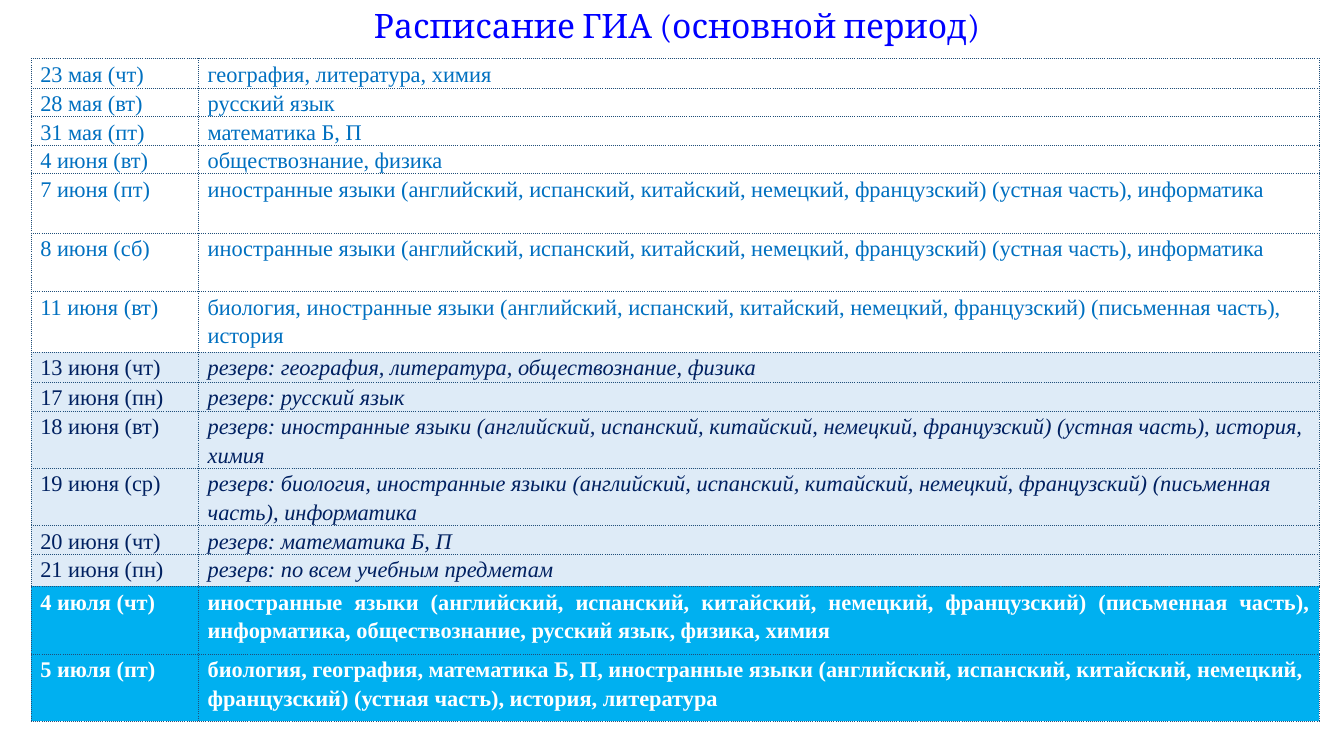
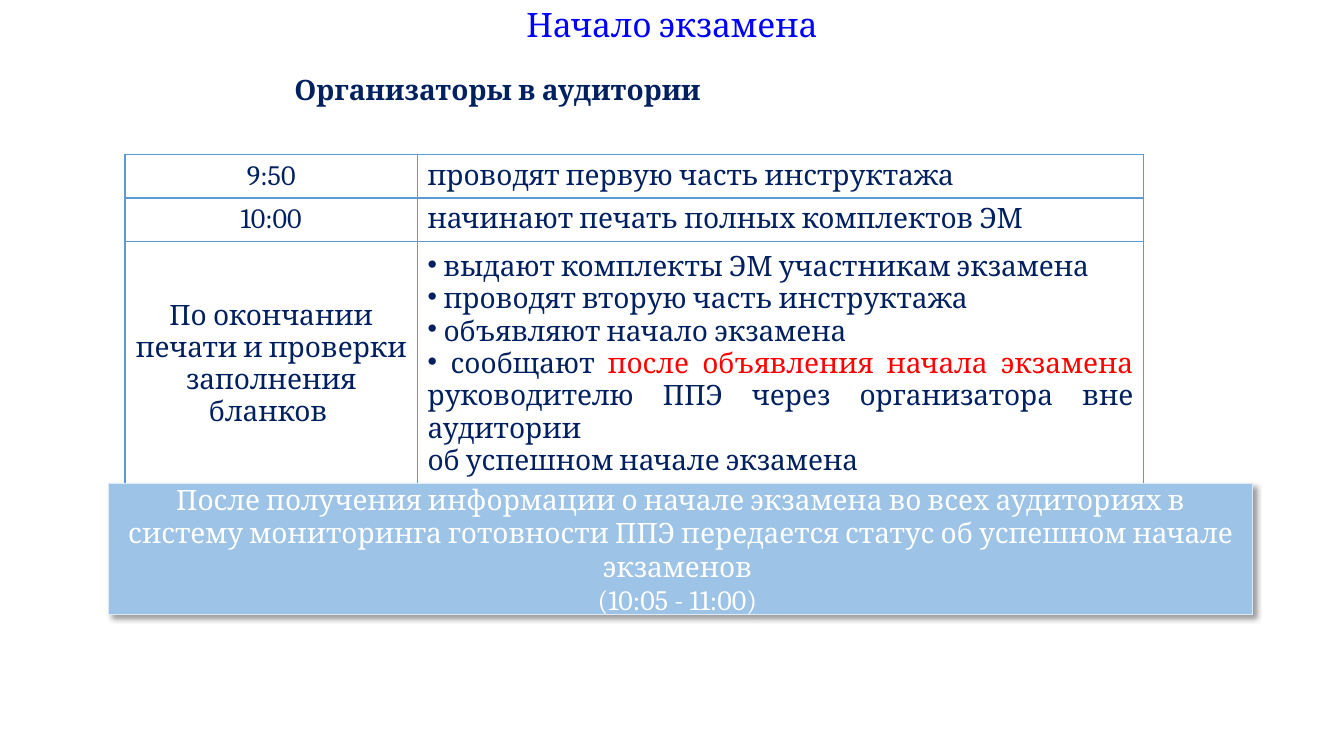
from lxml import etree
from pptx import Presentation
from pptx import util as u
from pptx.dml import color
from pptx.enum import shapes, text
from pptx.oxml import ns

LEFT, CENTER, JUSTIFY = text.PP_ALIGN.LEFT, text.PP_ALIGN.CENTER, text.PP_ALIGN.JUSTIFY
TOP, MIDDLE = text.MSO_ANCHOR.TOP, text.MSO_ANCHOR.MIDDLE
BLUE, NAVY, SKY, PALE, WHITE, RED = "0000FF", "002060", "0070C0", "DEEBF7", "FFFFFF", "FF0000"
TITLE = {"name": "Cambria", "size": u.Pt(24), "color": BLUE}
BODY = {"name": "Cambria", "size": u.Pt(20), "color": NAVY}
SCHEDULE = {"name": "Times New Roman", "size": u.Pt(16)}

LANGUAGES = "иностранные языки (английский, испанский, китайский, немецкий, французский)"
ORAL = LANGUAGES + " (устная часть)"
WRITTEN = LANGUAGES + " (письменная часть)"
PERIODS = [
    ({"color": SKY}, {}, None, [
        (0.29, "23 мая (чт)", "география, литература, химия", LEFT),
        (0.27, "28 мая (вт)", "русский язык", LEFT),
        (0.27, "31 мая (пт)", "математика Б, П", LEFT),
        (0.24, "4 июня (вт)", "обществознание, физика", LEFT),
        (0.59, "7 июня (пт)", ORAL + ", информатика", LEFT),
        (0.58, "8 июня (сб)", ORAL + ", информатика", LEFT),
        (0.6, "11 июня (вт)", "биология, " + WRITTEN + ", история", LEFT),
    ]),
    ({"color": NAVY}, {"italic": True}, PALE, [
        (0.3, "13 июня (чт)", "резерв: география, литература, обществознание, физика", LEFT),
        (0.26, "17 июня (пн)", "резерв: русский язык", LEFT),
        (0.56, "18 июня (вт)", "резерв: " + ORAL + ", история, химия", LEFT),
        (0.57, "19 июня (ср)", "резерв: биология, " + WRITTEN + ", информатика", LEFT),
        (0.25, "20 июня (чт)", "резерв: математика Б, П", LEFT),
        (0.32, "21 июня (пн)", "резерв: по всем учебным предметам", LEFT),
    ]),
    ({"color": WHITE, "bold": True}, {}, "00B0F0", [
        (0.67, "4 июля (чт)",
         WRITTEN + ", информатика, обществознание, русский язык, физика, химия", JUSTIFY),
        (0.67, "5 июля (пт)",
         "биология, география, математика Б, П, " + ORAL + ", история, литература", LEFT),
    ]),
]


def rgb(value):
    return color.RGBColor.from_string(value)


def add_xml(parent, tag, **attributes):
    return etree.SubElement(parent, ns.qn(tag), attributes)


class Slides:
    def __init__(self):
        self.deck = Presentation()
        self.deck.slide_width, self.deck.slide_height = u.Inches(13.33), u.Inches(7.5)
        self.page = None

    def new_page(self):
        self.page = self.deck.slides.add_slide(self.deck.slide_layouts[6])

    def set_text(self, frame, paragraphs, font, align=LEFT, spacing=None, bullet=None):
        for index, spans in enumerate(paragraphs):
            para = frame.add_paragraph() if index else frame.paragraphs[0]
            para.alignment = align
            if spacing:
                para.line_spacing = spacing
            if bullet:
                add_xml(para._p.get_or_add_pPr(), "a:buChar", char=bullet)
            for words, changes in [(spans, {})] if isinstance(spans, str) else spans:
                for number, line in enumerate(words.split("\n")):
                    if number:
                        para.add_line_break()
                    span = para.add_run()
                    span.text = line
                    for key, value in {**font, **changes}.items():
                        if key == "color":
                            span.font.color.rgb = rgb(value)
                        else:
                            setattr(span.font, key, value)

    def text_box(self, place, words, font, anchor=TOP, spacing=None):
        box = self.page.shapes.add_textbox(*map(u.Inches, place))
        box.text_frame.word_wrap = True
        box.text_frame.vertical_anchor = anchor
        self.set_text(box.text_frame, [words], font, CENTER, spacing)

    def banner(self, place, paragraphs, fill, line):
        box = self.page.shapes.add_shape(shapes.MSO_SHAPE.RECTANGLE, *map(u.Inches, place))
        box.fill.solid()
        box.fill.fore_color.rgb = rgb(fill)
        box.line.color.rgb = rgb(line)
        box.line.width = u.Pt(0.5)
        box.shadow.inherit = False
        effects = box._element.spPr.find(ns.qn("a:effectLst"))
        shadow = add_xml(effects, "a:outerShdw", blurRad=str(u.Pt(4)), dist=str(u.Pt(3)),
                         dir=str(45 * 60000), algn="tl", rotWithShape="0")
        shade = add_xml(shadow, "a:srgbClr", val="000000")
        add_xml(shade, "a:alpha", val="40000")
        box.text_frame.word_wrap = True
        box.text_frame.vertical_anchor = MIDDLE
        self.set_text(box.text_frame, paragraphs, {**BODY, "color": WHITE}, CENTER)

    def table(self, left, top, widths, heights):
        size = map(u.Inches, (left, top, sum(widths), sum(heights)))
        table = self.page.shapes.add_table(len(heights), len(widths), *size).table
        table.first_row = table.horz_banding = False
        for column, width in zip(table.columns, widths):
            column.width = u.Inches(width)
        for row, height in zip(table.rows, heights):
            row.height = u.Inches(height)
        return table

    def cell(self, cell, paragraphs, font, border, fill=None, layout=None, **style):
        for key, value in (layout or {}).items():
            setattr(cell, key, value)
        shade, width, dash = border
        for side in "LRTB":
            line = add_xml(cell._tc.get_or_add_tcPr(), "a:ln" + side, w=str(u.Pt(width)))
            add_xml(add_xml(line, "a:solidFill"), "a:srgbClr", val=shade)
            add_xml(line, "a:prstDash", val=dash)
        if fill:
            cell.fill.solid()
            cell.fill.fore_color.rgb = rgb(fill)
        else:
            cell.fill.background()
        self.set_text(cell.text_frame, paragraphs, font, **style)


def schedule_page(slides):
    slides.new_page()
    heights = [row[0] for period in PERIODS for row in period[3]]
    table = slides.table(0.31, 0.58, [1.66, 11.11], heights)
    rows = iter(table.rows)
    border = ("1F4E79", 0.25, "sysDot")
    margins = {"margin_left": u.Inches(0.09), "margin_right": u.Inches(0.09),
               "margin_top": 0, "margin_bottom": 0}
    for look, subject_look, fill, exams in PERIODS:
        font = {**SCHEDULE, **look}
        for _, date, subjects, align in exams:
            date_cell, subject_cell = next(rows).cells
            slides.cell(date_cell, [date], font, border, fill, margins, spacing=1.15)
            slides.cell(subject_cell, [subjects], {**font, **subject_look}, border, fill,
                        margins, align=align, spacing=1.15)
    slides.text_box((0.16, 0, 13.18, 0.5), "Расписание ГИА (основной период) ", TITLE)


def start_page(slides):
    slides.new_page()
    slides.text_box((0, 0, 13.33, 0.53), "Начало экзамена", TITLE, MIDDLE, 0.9)
    steps = [
        ("9:50", ["проводят первую часть инструктажа"], None),
        ("10:00", ["начинают печать полных комплектов ЭМ"], None),
        ("По окончании\nпечати и проверки заполнения бланков ", [
            " выдают комплекты ЭМ участникам экзамена",
            " проводят вторую часть инструктажа",
            " объявляют начало экзамена",
            [(" сообщают ", {}),
             ("после объявления начала экзамена ", {"color": RED}),
             ("руководителю ППЭ через организатора вне аудитории \n"
              "об успешном начале экзамена", {})],
        ], "•"),
    ]
    table = slides.table(1.24, 1.53, [2.9, 7.2], [0.42, 0.42, 2.34])
    border = ("5B9BD5", 1, "solid")
    centred = {"vertical_anchor": MIDDLE}
    for row, (time, actions, bullet) in zip(table.rows, steps):
        time_cell, action_cell = row.cells
        slides.cell(time_cell, [time], BODY, border, layout=centred, align=CENTER)
        slides.cell(action_cell, actions, BODY, border, layout=centred,
                    align=JUSTIFY, bullet=bullet)
    slides.text_box((1.6, 0.67, 6.67, 0.77), "Организаторы в аудитории",
                    {**BODY, "bold": True})
    slides.banner((1.08, 4.8, 11.34, 1.3), [
        "После получения информации о начале экзамена во всех аудиториях в систему "
        "мониторинга готовности ППЭ передается статус об успешном начале экзаменов ",
        "(10:05 - 11:00) ",
    ], "9DC3E6", PALE)


def main():
    slides = Slides()
    schedule_page(slides)
    start_page(slides)
    slides.deck.save("out.pptx")


if __name__ == "__main__":
    main()
